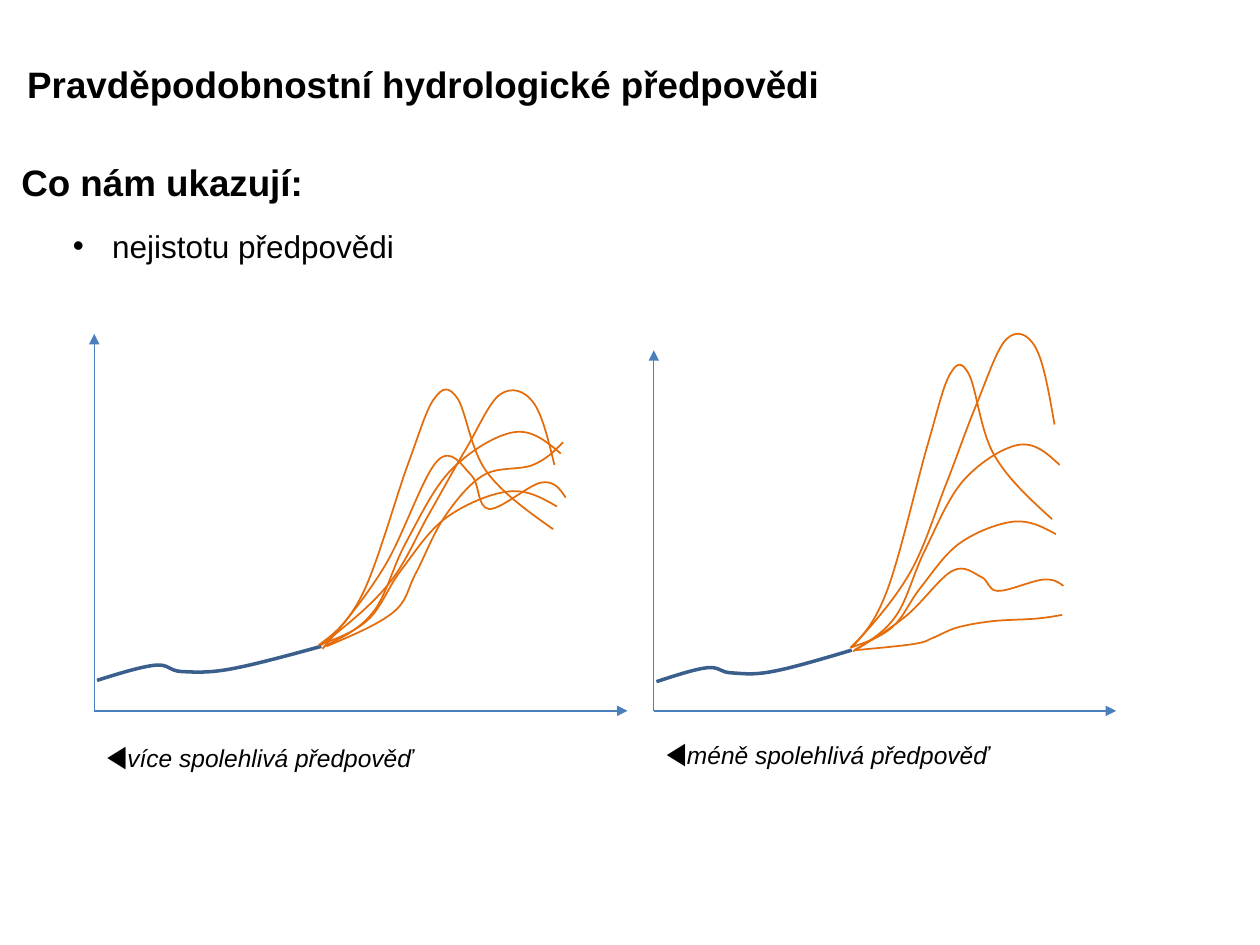
"""Build a slide that compares a more and a less reliable hydrological forecast."""
from dataclasses import dataclass

import pptx
import pptx.dml.color
import pptx.enum.shapes
import pptx.enum.text
import pptx.oxml
import pptx.oxml.ns
import pptx.util

Cm = pptx.util.Cm
Pt = pptx.util.Pt
RGB = pptx.dml.color.RGBColor
qn = pptx.oxml.ns.qn

BLACK = RGB(0x00, 0x00, 0x00)
BLUE = RGB(0x4B, 0x7E, 0xBC)
NAVY = RGB(0x3A, 0x5F, 0x8C)
ORANGE = RGB(0xE4, 0x6C, 0x0A)

UNIT = Cm(0.0254)
HEAD = {"size": Pt(21), "bold": True}
BODY = {"size": Pt(18)}
NOTE = {"size": Pt(14), "italic": True}

Knots = list[tuple[int, int]]


@dataclass
class Label:
    """A text box in centimetres with formatted runs."""
    left: float
    top: float
    width: float
    height: float
    runs: list[tuple[str, dict]]
    wrap: bool = True
    bullet: bool = False


@dataclass
class Plot:
    """Axes in centimetres and curve knots in plot units."""
    left: float
    right: float
    top: float
    past: Knots
    runs: list[Knots]


BASE = 14.33
LABELS = [
    Label(0.3, 1.12, 16.61, 1.14,
          [("Pravděpodobnostní hydrologické předpovědi", HEAD)], wrap=False),
    Label(0.18, 3.1, 6.25, 1.14, [("Co nám ukazují:", HEAD)], wrap=False),
    Label(1.22, 4.45, 7.34, 1.02, [("nejistotu předpovědi", BODY)], bullet=True),
    Label(1.9, 14.71, 8.66, 1.02,
          [("◀", BODY), ("více spolehlivá předpověď", NOTE)]),
    Label(13.18, 14.66, 8.08, 1.02,
          [("◀", BODY), ("méně spolehlivá předpověď", NOTE)]),
]
PLOTS = [
    Plot(1.9, 12.65, 6.73,
         [(77, 540), (123, 528), (144, 533), (183, 531), (255, 513)],
         [[(253, 512), (292, 492), (318, 453), (354, 411), (404, 390), (442, 402)],
          [(257, 513), (296, 486), (322, 431), (358, 373), (408, 343), (445, 360)],
          [(253, 512), (288, 471), (324, 368), (345, 316), (363, 316), (386, 374),
           (439, 420)],
          [(259, 513), (312, 486), (330, 455), (353, 410), (384, 377), (423, 369),
           (447, 351)],
          [(255, 512), (308, 464), (341, 407), (370, 356), (397, 313), (423, 319),
           (440, 369)],
          [(256, 515), (305, 450), (347, 366), (374, 377), (388, 404), (430, 383),
           (449, 395)]]),
    Plot(13.18, 22.5, 7.06,
         [(521, 541), (561, 530), (580, 534), (613, 533), (676, 516)],
         [[(675, 514), (708, 498), (731, 466), (762, 431), (805, 414), (838, 424)],
          [(678, 516), (711, 489), (734, 437), (765, 381), (809, 353), (841, 369)],
          [(675, 514), (704, 469), (736, 354), (754, 297), (769, 297), (789, 361),
           (835, 412)],
          [(679, 516), (726, 511), (741, 506), (760, 498), (788, 493), (822, 491),
           (843, 488)],
          [(676, 514), (722, 455), (751, 384), (775, 321), (799, 269), (822, 276),
           (837, 337)],
          [(677, 517), (719, 489), (756, 453), (779, 458), (792, 469), (828, 460),
           (844, 465)]]),
]


def bend(knots: Knots) -> list[tuple[float, float]]:
    """Return the Bezier points of a smooth curve through the knots."""
    def mid(a, b):
        return (a[0] + b[0]) / 2, (a[1] + b[1]) / 2

    def lean(i, sign):
        return tuple(knots[i][k] + sign * (knots[i + 1][k] - knots[i - 1][k]) / 6
                     for k in (0, 1))

    points = []
    last = len(knots) - 2
    for i in range(last + 1):
        lead = lean(i, 1) if i > 0 else mid(knots[0], lean(1, -1))
        tail = lean(i + 1, -1) if i < last else mid(lead, knots[-1])
        points += [lead, tail, knots[i + 1]]
    return points


def draw_curve(group, knots: Knots, color: RGB, width: float) -> None:
    """Draw one smooth open curve."""
    start, *rest = [(x * UNIT, y * UNIT) for x, y in [knots[0], *bend(knots)]]
    pen = group.shapes.build_freeform(*start, scale=1.0)
    pen.add_line_segments(rest, close=False)
    shape = pen.convert_to_shape()
    steps = list(shape._element.iter(qn("a:lnTo")))
    for i in range(0, len(steps), 3):
        cubic = pptx.oxml.parse_xml(
            f'<a:cubicBezTo {pptx.oxml.ns.nsdecls("a")}/>')
        steps[i].addprevious(cubic)
        for step in steps[i:i + 3]:
            cubic.append(step[0])
            step.getparent().remove(step)
    shape.shadow.inherit = False
    shape.fill.background()
    shape.line.color.rgb = color
    shape.line.width = Pt(width)


def draw_axis(group, left: float, right: float, top: float) -> None:
    """Draw one arrow from the origin of a plot."""
    axis = group.shapes.add_connector(
        pptx.enum.shapes.MSO_CONNECTOR.STRAIGHT,
        Cm(left), Cm(BASE), Cm(right), Cm(top))
    axis.line.color.rgb = BLUE
    axis.line.width = Pt(0.75)
    end = axis.line._get_or_add_ln().makeelement(qn("a:tailEnd"), {"type": "triangle"})
    axis.line._get_or_add_ln().append(end)
    props = axis._element.spPr
    props.append(props.makeelement(qn("a:effectLst"), {}))


def draw_plot(slide, plot: Plot) -> None:
    """Draw the axes, the past flow and the forecast runs as a group."""
    group = slide.shapes.add_group_shape()
    draw_axis(group, plot.left, plot.right, BASE)
    draw_axis(group, plot.left, plot.left, plot.top)
    draw_curve(group, plot.past, NAVY, 2)
    for knots in plot.runs:
        draw_curve(group, knots, ORANGE, 1)


def draw_label(slide, label: Label) -> None:
    """Draw one text box."""
    box = slide.shapes.add_textbox(
        Cm(label.left), Cm(label.top), Cm(label.width), Cm(label.height))
    frame = box.text_frame
    frame.word_wrap = label.wrap
    frame.auto_size = pptx.enum.text.MSO_AUTO_SIZE.SHAPE_TO_FIT_TEXT
    para = frame.paragraphs[0]
    if label.bullet:
        props = para._p.get_or_add_pPr()
        props.set("marL", str(Cm(0.79)))
        props.set("indent", str(-Cm(0.79)))
        props.append(props.makeelement(qn("a:buFont"), {"typeface": "Arial"}))
        props.append(props.makeelement(qn("a:buChar"), {"char": "•"}))
    for text, style in label.runs:
        run = para.add_run()
        run.text = text
        run.font.color.rgb = BLACK
        for key, value in {"name": "Arial", **style}.items():
            setattr(run.font, key, value)


def main() -> None:
    """Build and save the slide."""
    deck = pptx.Presentation()
    deck.slide_width, deck.slide_height = Cm(25.4), Cm(19.05)
    slide = deck.slides.add_slide(deck.slide_layouts[6])
    for plot in PLOTS:
        draw_plot(slide, plot)
    for label in LABELS:
        draw_label(slide, label)
    deck.save("out.pptx")


if __name__ == "__main__":
    main()
